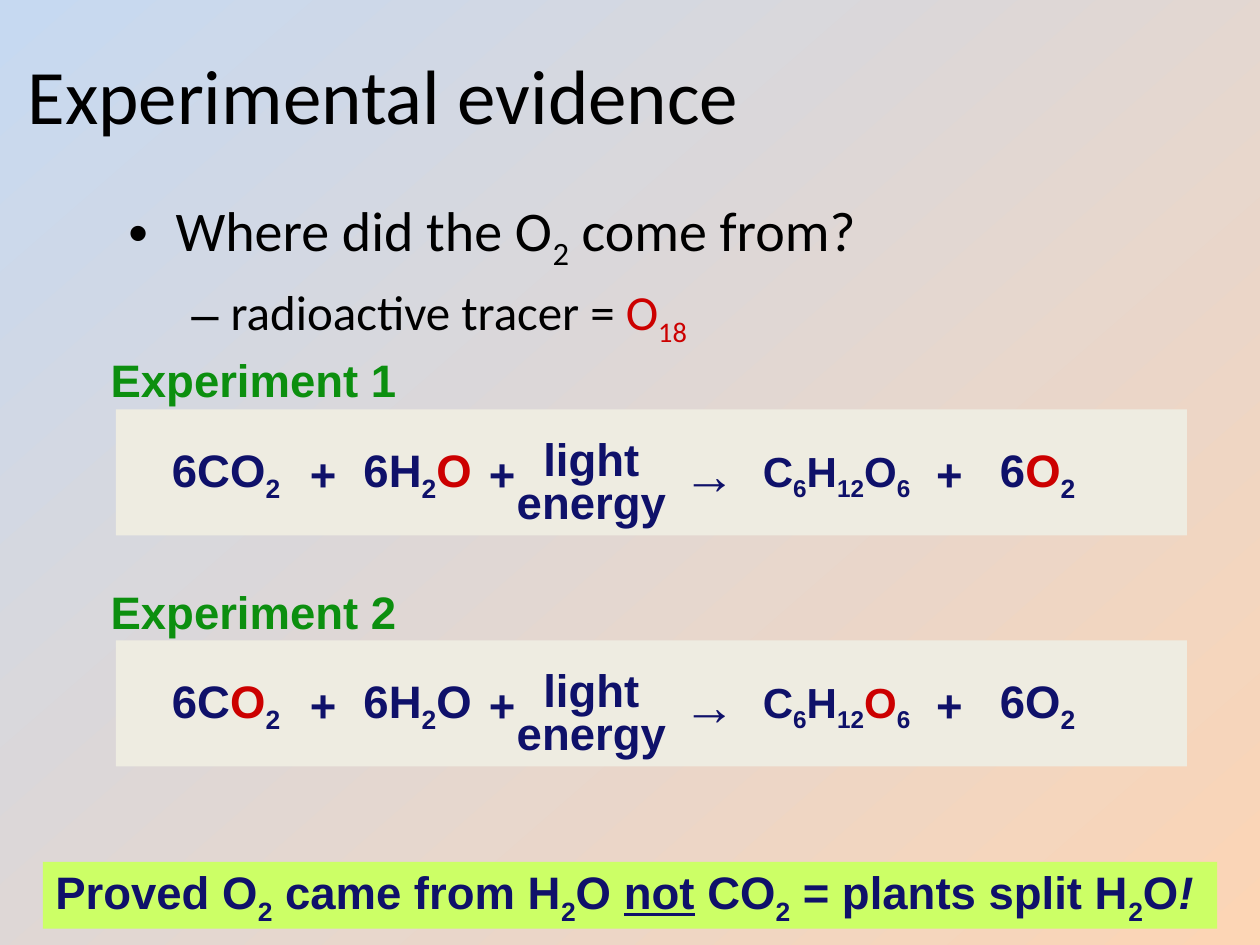
from dataclasses import dataclass

from lxml import etree
from pptx import Presentation
from pptx import util as u
from pptx.dml.color import RGBColor
from pptx.enum import shapes, text
from pptx.oxml import ns

Pt = u.Pt
COLORS = {
    "black": "000000", "navy": "0F116A", "red": "CC0000", "green": "0C8F0F",
    "panel": "EEECE1", "lime": "CCFF66", "peach": "FCD5B5", "sky": "C6D9F1",
}


@dataclass
class Term:
    """One piece of an equation; dy is measured from the top of the panel."""
    markup: str
    left: float
    dy: float
    width: float
    height: float
    size: float = 26
    spacing: float = 1.0


@dataclass
class Experiment:
    label: str
    top: float
    carbon_dioxide: str
    water: str
    glucose: str
    oxygen: str


def rgb(name: str) -> RGBColor:
    return RGBColor.from_string(COLORS[name])


def write(p, markup: str, *, size: float, color: str = "navy", font: str = "Arial",
          bold: bool = True) -> None:
    """Add runs split by "|"; a leading _ is subscript, * red, ~ underlined, / italic."""
    for part in markup.split("|"):
        marks = ""
        while part[0] in "_*~/":
            marks, part = marks + part[0], part[1:]
        r = p.add_run()
        r.text = part
        r.font.name, r.font.size, r.font.bold = font, Pt(size), bold
        r.font.color.rgb = rgb("red" if "*" in marks else color)
        if "~" in marks:
            r.font.underline = True
        if "/" in marks:
            r.font.italic = True
        if "_" in marks:
            r.font._element.set("baseline", "-25000")


def add_text(parent, box: tuple, markup: str, *, align=text.PP_ALIGN.CENTER,
             wrap: bool = False, grow: bool = True, spacing: float = 1.0, **fmt):
    """Add a middle-anchored text box with one paragraph for each line."""
    sp = parent.add_textbox(*map(Pt, box))
    tf = sp.text_frame
    tf.word_wrap = wrap
    tf.auto_size = (text.MSO_AUTO_SIZE.SHAPE_TO_FIT_TEXT if grow
                    else text.MSO_AUTO_SIZE.NONE)
    tf.vertical_anchor = text.MSO_ANCHOR.MIDDLE
    for i, line in enumerate(markup.split("\n")):
        p = tf.add_paragraph() if i else tf.paragraphs[0]
        p.alignment = align
        if spacing != 1:
            p.line_spacing = spacing
        write(p, line, **fmt)
    return sp


def add_bullet(p, char: str, level: int, margin: float, hang: float) -> None:
    p.level = level
    ppr = p._p.get_or_add_pPr()
    ppr.set("marL", str(Pt(margin)))
    ppr.set("indent", str(-Pt(hang)))
    etree.SubElement(ppr, ns.qn("a:buFont")).set("typeface", "Arial")
    etree.SubElement(ppr, ns.qn("a:buChar")).set("char", char)


def add_experiment(s, e: Experiment) -> None:
    group = s.shapes.add_group_shape().shapes
    sp = group.add_shape(shapes.MSO_SHAPE.RECTANGLE, Pt(66.24), Pt(e.top), Pt(612), Pt(72))
    sp.shadow.inherit = False
    sp.fill.solid()
    sp.fill.fore_color.rgb = rgb("panel")
    sp.line.fill.background()

    terms = [
        Term(e.carbon_dioxide, 90.72, 17.28, 77, 38),
        Term(e.water, 200.16, 17.28, 77, 38),
        Term(e.glucose, 426.24, 18.72, 103.7, 36, size=24),
        Term(e.oxygen, 563.76, 17.28, 58.3, 38),
        Term("light\nenergy", 288, 14.4, 100, 57.6, spacing=0.8),
        Term("→", 383.76, 15.12, 44, 43.2, size=30),
    ]
    terms += [Term("+", left, 17.28, 29.5, 38) for left in (169.92, 527.76, 272.16)]
    for t in terms:
        add_text(group, (t.left, e.top + t.dy, t.width, t.height), t.markup,
                 size=t.size, spacing=t.spacing)
    add_text(group, (56.16, e.top - 36, 177.84, 38), e.label,
             align=text.PP_ALIGN.LEFT, size=26, color="green")


def main() -> None:
    prs = Presentation()
    prs.slide_width, prs.slide_height = Pt(720), Pt(540)
    s = prs.slides.add_slide(prs.slide_layouts[6])

    # Background gradient, sky at top left to peach at bottom right
    fill = s.background.fill
    fill.gradient()
    fill.gradient_angle = 131
    for stop, name in zip(fill.gradient_stops, ("peach", "sky")):
        stop.color.rgb = rgb(name)

    # Title
    body_style = {"font": "Calibri", "color": "black", "bold": False}
    left = text.PP_ALIGN.LEFT
    add_text(s.shapes, (8.64, 8.64, 648, 90), "Experimental evidence",
             align=left, wrap=True, grow=False, size=44, **body_style)

    # Question with its sub-point
    tf = s.shapes.add_textbox(Pt(66.24), Pt(108), Pt(612), Pt(87.84)).text_frame
    tf.word_wrap = True
    question, tracer = tf.paragraphs[0], tf.add_paragraph()
    for p, markup, size, bullet in (
        (question, "Where did the O|_2| come from?", 32, ("•", 0, 27, 27)),
        (tracer, "radioactive tracer = |*O|_*18", 28, ("–", 1, 58.5, 22.5)),
    ):
        p.space_before = Pt(size * 0.2)
        add_bullet(p, *bullet)
        write(p, markup, size=size, **body_style)

    # Experiments, with the traced oxygen in red
    for e in (
        Experiment("Experiment 1", 234, "6CO|_2", "6H|_2|*O",
                   "C|_6|H|_12|O|_6", "6|*O|_2"),
        Experiment("Experiment 2", 366, "6C|*O|_2", "6H|_2|O",
                   "C|_6|H|_12|*O|_6", "6O|_2"),
    ):
        add_experiment(s, e)

    # Conclusion
    sp = add_text(s.shapes, (24.48, 492.48, 671, 38.2),
                  "Proved O|_2| came from H|_2|O |~not| CO|_2| = plants split H|_2|O|/!",
                  align=left, wrap=True, size=26)
    sp.fill.solid()
    sp.fill.fore_color.rgb = rgb("lime")

    prs.save("out.pptx")


if __name__ == "__main__":
    main()
